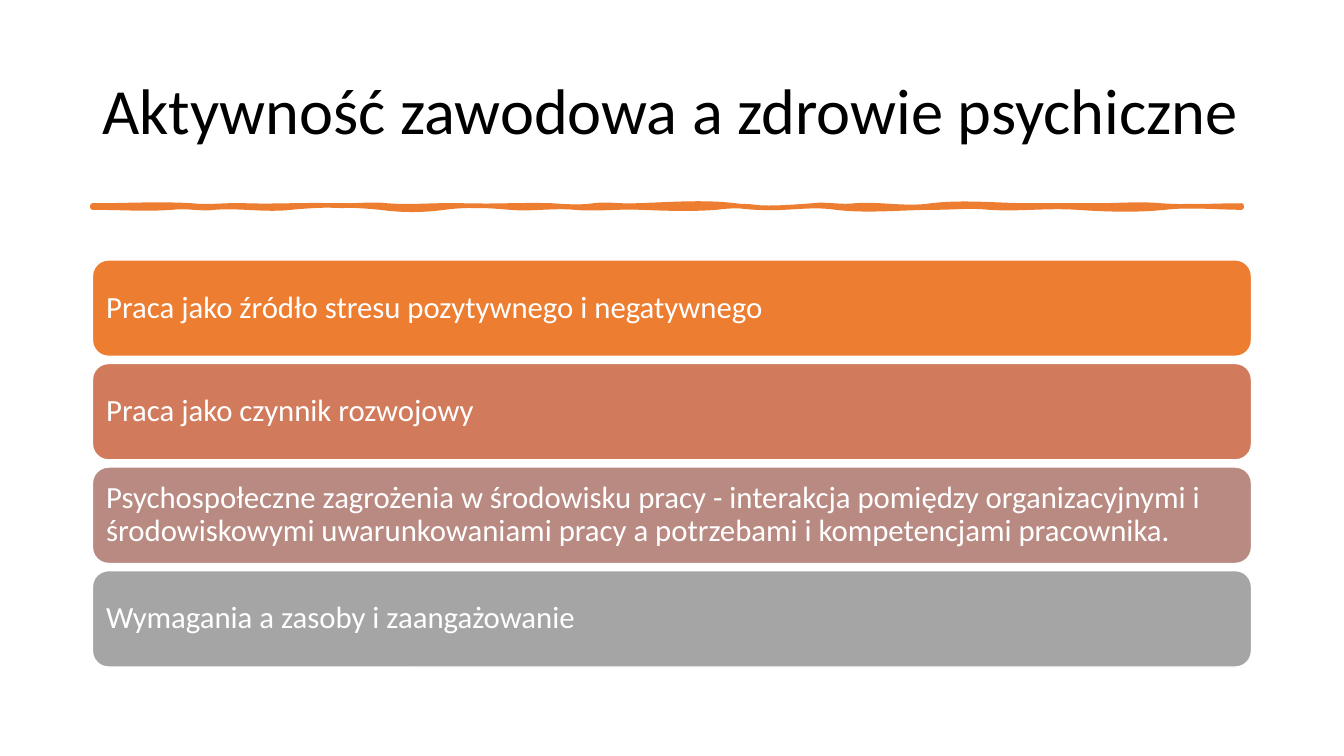
from lxml import etree
from pptx import Presentation
from pptx.dml.color import RGBColor
from pptx.enum.shapes import MSO_SHAPE
from pptx.enum.text import MSO_ANCHOR, PP_ALIGN
from pptx.oxml.ns import qn
from pptx.util import Cm, Pt

ROUNDED = MSO_SHAPE.ROUNDED_RECTANGLE
MIDDLE = MSO_ANCHOR.MIDDLE
LEFT = PP_ALIGN.LEFT

BLACK = RGBColor(0x00, 0x00, 0x00)
WHITE = RGBColor(0xFF, 0xFF, 0xFF)
ORANGE = RGBColor(0xED, 0x7D, 0x31)
TERRACOTTA = RGBColor(0xD1, 0x7B, 0x5C)
DUSTY_ROSE = RGBColor(0xB9, 0x8A, 0x82)
GREY = RGBColor(0xA5, 0xA5, 0xA5)

FONT = "Calibri"
HEADING = "Aktywność zawodowa a zdrowie psychiczne"
TOPICS = [
    ("Praca jako źródło stresu pozytywnego i negatywnego", ORANGE),
    ("Praca jako czynnik rozwojowy", TERRACOTTA),
    ("Psychospołeczne zagrożenia w środowisku pracy - interakcja pomiędzy "
     "organizacyjnymi i środowiskowymi uwarunkowaniami pracy a potrzebami "
     "i kompetencjami pracownika.", DUSTY_ROSE),
    ("Wymagania a zasoby i zaangażowanie", GREY),
]

MARGIN, CONTENT_WIDTH = 2.33, 29.21
BAR_TOP, BAR_HEIGHT, BAR_PITCH = 6.55, 2.43, 2.61
BAR_INSET = Cm(0.23)

UPPER_Y, LOWER_Y = 5.18, 5.23
SWELL = 0.025
UPPER_EDGE = [
    (2.33, 0), (4.83, 2), (6.2, 1), (8.41, 1), (9.75, 2), (11.68, 1),
    (13.92, 1), (14.96, -2), (16.03, -1), (18.54, 4), (20.47, -2),
    (21.54, -2), (23.47, -4), (25.98, 0), (27.61, 0), (29.26, 2), (31.29, 0),
]
LOWER_EDGE = [
    (31.29, 0), (29.36, 3), (27.13, -2), (24.92, -2), (23.57, 0), (21.06, -4),
    (19.13, -2), (18.06, 2), (16.13, -1), (14.48, -2), (12.85, -2), (11.2, 3),
    (9.58, -3), (7.34, 3), (5.41, 2), (4.34, 2), (2.33, 0),
]


def set_text(frame, text, size, color):
    frame.text = text
    frame.word_wrap = True
    frame.vertical_anchor = MIDDLE
    paragraph = frame.paragraphs[0]
    paragraph.alignment = LEFT
    paragraph.line_spacing = 0.9
    font = paragraph.runs[0].font
    font.name = FONT
    font.size = Pt(size)
    font.color.rgb = color


def add_heading(slide):
    heading = slide.shapes.title
    heading.left, heading.top = Cm(MARGIN), Cm(1.03)
    heading.width, heading.height = Cm(CONTENT_WIDTH), Cm(3.68)
    set_text(heading.text_frame, HEADING, 46, BLACK)
    body = heading.text_frame._txBody.bodyPr
    for fit in list(body):
        body.remove(fit)
    etree.SubElement(body, qn("a:noAutofit"))


def bend_edges(brush, knots):
    straight = list(brush._element.iter(qn("a:lnTo")))
    for segment, start, end in zip(straight, knots, knots[1:]):
        (x0, y0, slope0), (x1, y1, slope1) = start, end
        third = (x1 - x0) / 3
        handles = [(x0 + third, y0 + slope0 * SWELL),
                   (x1 - third, y1 - slope1 * SWELL)]
        segment.tag = qn("a:cubicBezTo")
        for position, (x, y) in enumerate(handles):
            handle = etree.Element(qn("a:pt"))
            handle.set("x", str(Cm(x) - brush.left))
            handle.set("y", str(Cm(y) - brush.top))
            segment.insert(position, handle)


def add_brush_line(slide):
    knots = [(x, UPPER_Y, slope) for x, slope in UPPER_EDGE]
    knots += [(x, LOWER_Y, slope) for x, slope in LOWER_EDGE]
    corners = [(Cm(x), Cm(y)) for x, y, slope in knots]
    builder = slide.shapes.build_freeform(*corners[0])
    builder.add_line_segments(corners[1:], close=True)
    brush = builder.convert_to_shape()
    bend_edges(brush, knots)
    brush.shadow.inherit = False
    brush.fill.solid()
    brush.fill.fore_color.rgb = ORANGE
    brush.line.color.rgb = ORANGE
    brush.line.width = Pt(3.25)
    etree.SubElement(brush.line._get_or_add_ln(), qn("a:round"))


def add_topic(slide, row, text, color):
    bar = slide.shapes.add_shape(
        ROUNDED, Cm(MARGIN), Cm(BAR_TOP + row * BAR_PITCH),
        Cm(CONTENT_WIDTH), Cm(BAR_HEIGHT))
    bar.shadow.inherit = False
    bar.fill.solid()
    bar.fill.fore_color.rgb = color
    bar.line.color.rgb = WHITE
    bar.line.width = Pt(1)
    frame = bar.text_frame
    frame.margin_left = frame.margin_right = BAR_INSET
    frame.margin_top = frame.margin_bottom = BAR_INSET
    set_text(frame, text, 22, WHITE)


def main():
    deck = Presentation()
    deck.slide_width, deck.slide_height = Cm(33.87), Cm(19.05)
    slide = deck.slides.add_slide(deck.slide_layouts[5])
    add_heading(slide)
    add_brush_line(slide)
    for row, (text, color) in enumerate(TOPICS):
        add_topic(slide, row, text, color)
    deck.save("out.pptx")


if __name__ == "__main__":
    main()
